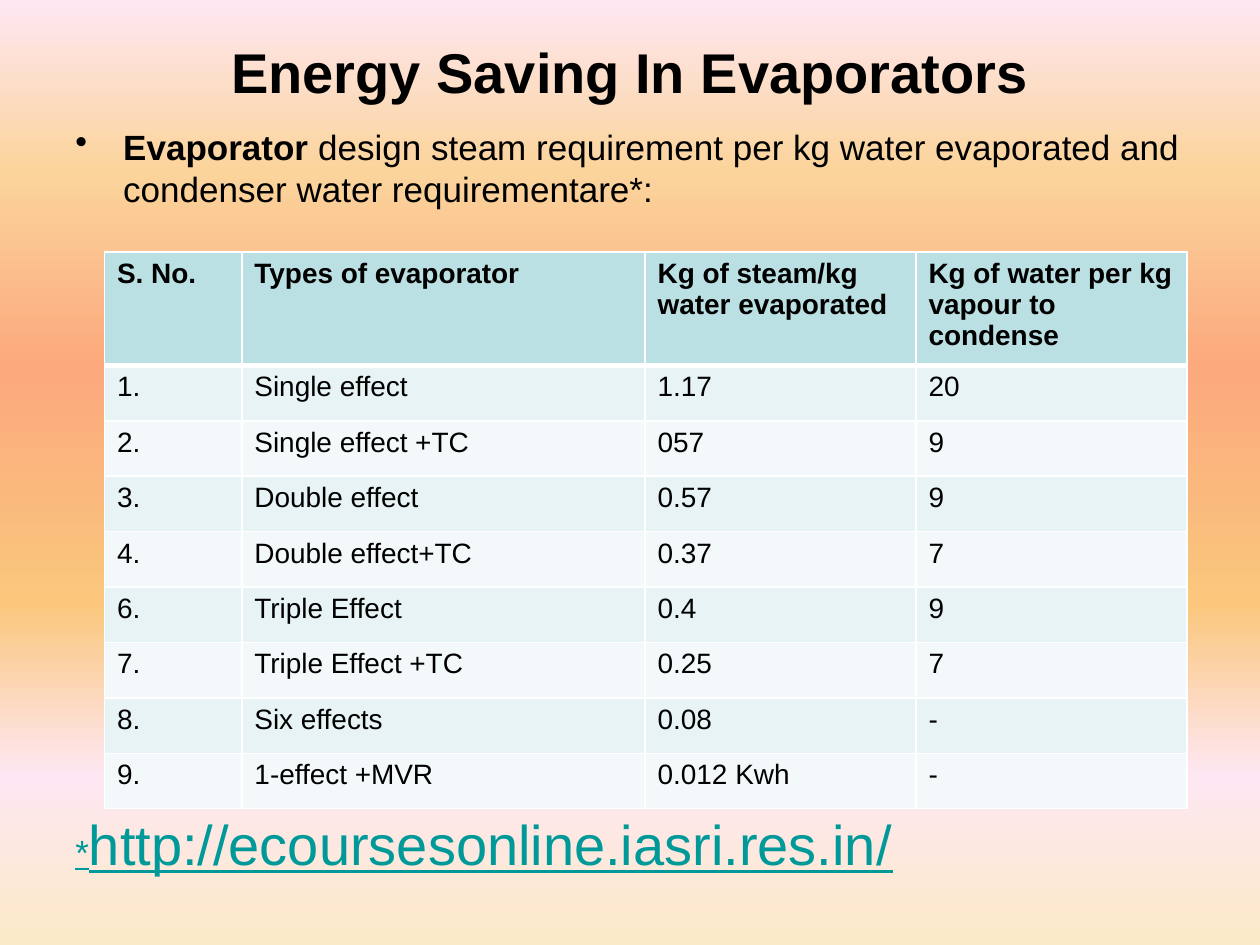
from dataclasses import dataclass

from lxml.etree import SubElement
from pptx import Presentation
from pptx.dml.color import RGBColor
from pptx.enum.text import MSO_ANCHOR, PP_ALIGN
from pptx.oxml.ns import qn
from pptx.util import Inches, Pt

WIDTH, HEIGHT = 10, 7.5
FONT = "Arial"
COLORS = {
    "text": "000000",
    "link": "009999",
    "border": "FFFFFF",
    "header": "BBE0E3",
    "odd": "E7F3F4",
    "even": "F3F9FA",
}
BACKGROUND_STOPS = [
    (0, "FEE7F2"), (18, "FBD49C"), (39, "FBA97D"),
    (64, "FAC77D"), (82, "FEE7F2"), (100, "FBEAC7"),
]
COLUMN_WIDTHS = [1.09, 3.2, 2.15, 2.15]
HEADER_HEIGHT, ROW_HEIGHT = 0.84, 0.44
ROWS = [
    ("S. No.", "Types of evaporator", "Kg of steam/kg water evaporated",
     "Kg of water per kg vapour to condense"),
    ("1.", "Single effect", "1.17", "20"),
    ("2.", "Single effect +TC", "057", "9"),
    ("3.", "Double effect", "0.57", "9"),
    ("4.", "Double effect+TC", "0.37", "7"),
    ("6.", "Triple Effect", "0.4", "9"),
    ("7.", "Triple Effect +TC", "0.25", "7"),
    ("8.", "Six effects", "0.08", "-"),
    ("9.", "1-effect +MVR", "0.012 Kwh", "-"),
]


@dataclass
class Span:
    text: str
    size: int
    bold: bool = False


@dataclass
class TextBlock:
    top: float
    height: float
    spans: list[Span]
    color: str = "text"
    align: PP_ALIGN = PP_ALIGN.LEFT
    anchor: MSO_ANCHOR = MSO_ANCHOR.TOP
    bullet: bool = False
    underline: bool = False


BLOCKS = [
    TextBlock(0.04, 0.07, [Span("Energy Saving In Evaporators", 32, True)],
              align=PP_ALIGN.CENTER, anchor=MSO_ANCHOR.MIDDLE),
    TextBlock(0.126, 0.11, [
        Span("Evaporator\u00a0".replace("\u00a0", " "), 20, True),
        Span("design steam requirement per kg water evaporated "
             "and condenser water requirementare*:", 20),
    ], bullet=True),
    TextBlock(0.85, 0.08, [
        Span("*", 20), Span("http://ecoursesonline.iasri.res.in/", 32),
    ], color="link", underline=True),
]


def paint_background(page) -> None:
    fill = page.background.fill
    fill.gradient()
    fill.gradient_angle = 270
    stops = page.element.find(".//" + qn("a:gsLst"))
    for stop in list(stops):
        stops.remove(stop)
    for position, color in BACKGROUND_STOPS:
        stop = SubElement(stops, qn("a:gs"), pos=str(position * 1000))
        SubElement(stop, qn("a:srgbClr"), val=color)


def add_text(page, block: TextBlock) -> None:
    box = page.shapes.add_textbox(
        Inches(0.05 * WIDTH), Inches(block.top * HEIGHT),
        Inches(0.9 * WIDTH), Inches(block.height * HEIGHT))
    frame = box.text_frame
    frame.word_wrap = True
    frame.vertical_anchor = block.anchor
    para = frame.paragraphs[0]
    para.alignment = block.align
    if block.bullet:
        properties = para._p.get_or_add_pPr()
        properties.set("marL", str(Inches(0.38)))
        properties.set("indent", str(-Inches(0.38)))
        SubElement(properties, qn("a:buChar"), char="•")
    para.font.name = FONT
    para.font.color.rgb = RGBColor.from_string(COLORS[block.color])
    para.font.underline = block.underline
    for span in block.spans:
        run = para.add_run()
        run.text = span.text
        run.font.size = Pt(span.size)
        run.font.bold = span.bold


def add_borders(cell, row: int) -> None:
    properties = cell._tc.get_or_add_tcPr()
    thick_side = {0: "lnB", 1: "lnT"}.get(row)
    for side in ("lnL", "lnR", "lnT", "lnB"):
        width = Pt(3 if side == thick_side else 1)
        line = SubElement(properties, qn("a:" + side), w=str(width))
        fill = SubElement(line, qn("a:solidFill"))
        SubElement(fill, qn("a:srgbClr"), val=COLORS["border"])


def add_evaporator_table(page) -> None:
    table = page.shapes.add_table(
        len(ROWS), len(COLUMN_WIDTHS), Inches(0.083 * WIDTH), Inches(2),
        Inches(sum(COLUMN_WIDTHS)),
        Inches(HEADER_HEIGHT + ROW_HEIGHT * (len(ROWS) - 1))).table
    for column, width in zip(table.columns, COLUMN_WIDTHS):
        column.width = Inches(width)
    for row, values in enumerate(ROWS):
        is_header = row == 0
        table.rows[row].height = Inches(HEADER_HEIGHT if is_header else ROW_HEIGHT)
        shade = "header" if is_header else "odd" if row % 2 else "even"
        for column, value in enumerate(values):
            cell = table.cell(row, column)
            add_borders(cell, row)
            cell.fill.solid()
            cell.fill.fore_color.rgb = RGBColor.from_string(COLORS[shade])
            cell.text = value
            font = cell.text_frame.paragraphs[0].font
            font.name = FONT
            font.size = Pt(16)
            font.bold = is_header
            font.color.rgb = RGBColor.from_string(COLORS["text"])


def main() -> None:
    deck = Presentation()
    deck.slide_width, deck.slide_height = Inches(WIDTH), Inches(HEIGHT)
    page = deck.slides.add_slide(deck.slide_layouts[6])
    paint_background(page)
    for block in BLOCKS:
        add_text(page, block)
    add_evaporator_table(page)
    deck.save("out.pptx")


if __name__ == "__main__":
    main()
